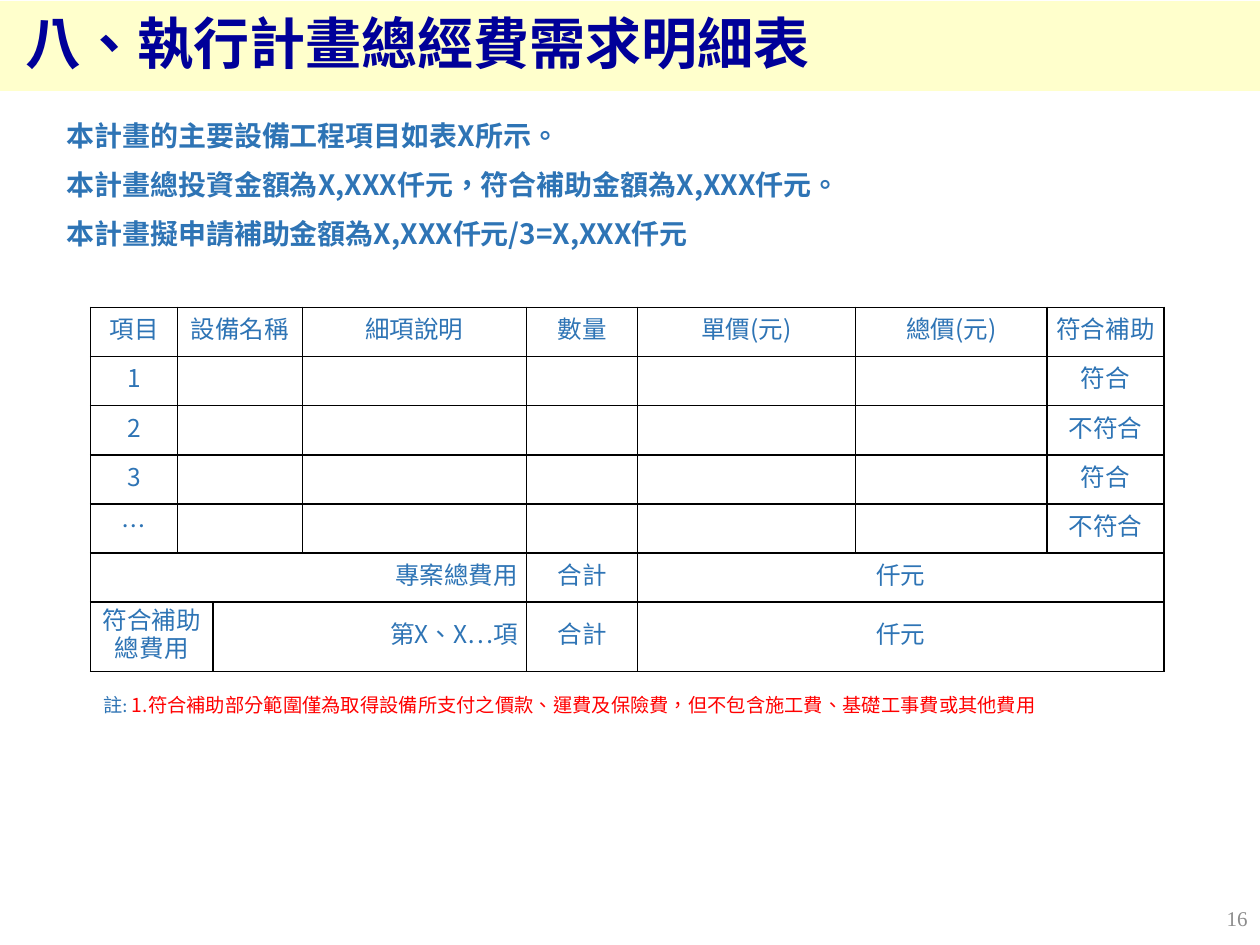
from lxml.etree import SubElement
from pptx import Presentation
from pptx.dml.color import RGBColor as Color
from pptx.enum.lang import MSO_LANGUAGE_ID as Language
from pptx.enum.text import MSO_ANCHOR as Anchor, MSO_AUTO_SIZE as AutoSize, PP_ALIGN as Align
from pptx.oxml import parse_xml
from pptx.oxml.ns import nsdecls, qn
from pptx.util import Inches, Pt

COLORS = {
    "band": "FFFFCC", "title": "000099", "text": "2E74B5",
    "alert": "FF0000", "number": "8C8C8C", "border": "000000",
}
CJK_FONT = "Noto Sans CJK SC"
COLUMNS = [0.69, 0.28, 0.71, 1.78, 0.88, 1.73, 1.52, 0.93]
ROWS = [0.39] * 6 + [0.55]
HEADERS = {0: "項目", 1: "設備名稱", 3: "細項說明", 4: "數量",
           5: "單價(元)", 6: "總價(元)", 7: "符合補助"}
ITEMS = [("1", "符合"), ("2", "不符合"), ("3", "符合"), ("…", "不符合")]
TOTALS = [
    {0: "專案總費用", 4: "合計", 5: "仟元"},
    {0: "符合補助總費用", 2: "第X、X…項", 4: "合計", 5: "仟元"},
]
SPANS = [(row, 1, 2) for row in range(5)] + [
    (5, 0, 3), (5, 5, 7), (6, 0, 1), (6, 2, 3), (6, 5, 7)]
RIGHT_ALIGNED = {(5, 0), (6, 2)}
STATEMENTS = [
    "本計畫的主要設備工程項目如表X所示。",
    "本計畫總投資金額為X,XXX仟元，符合補助金額為X,XXX仟元。",
    "本計畫擬申請補助金額為X,XXX仟元/3=X,XXX仟元",
]


def add_text(paragraph, text, size=14, color="text", font=CJK_FONT, bold=False,
             align=Align.LEFT, spacing=None, before=0):
    """Append a formatted run to a paragraph."""
    paragraph.alignment = align
    paragraph.space_before = Pt(before)
    if spacing:
        paragraph.line_spacing = spacing
    run = paragraph.add_run()
    run.text = text
    run.font.name = font
    run.font.size = Pt(size)
    run.font.bold = bold
    run.font.color.rgb = Color.from_string(COLORS[color])
    run.font.language_id = Language.TRADITIONAL_CHINESE
    SubElement(run.font._element, qn("a:ea"), typeface=CJK_FONT)


def place(shape, box, anchor=Anchor.TOP):
    """Position a text shape and return its text frame."""
    shape.left, shape.top, shape.width, shape.height = map(Inches, box)
    frame = shape.text_frame
    frame.word_wrap = True
    frame.auto_size = AutoSize.NONE
    frame.vertical_anchor = anchor
    return frame


def add_text_box(slide, box, anchor=Anchor.TOP):
    """Add a text box and return its first paragraph."""
    shape = slide.shapes.add_textbox(0, 0, 0, 0)
    return place(shape, box, anchor).paragraphs[0]


def build_title(slide, box):
    """Fill the title band."""
    title = slide.shapes.title
    frame = place(title, box, Anchor.MIDDLE)
    frame.margin_left = Inches(0.2)
    title.fill.solid()
    title.fill.fore_color.rgb = Color.from_string(COLORS["band"])
    title.line.color.rgb = Color.from_string(COLORS["band"])
    title.line.width = Pt(0.5)
    add_text(frame.paragraphs[0], "八、執行計畫總經費需求明細表", size=32,
             color="title", bold=True, spacing=0.9)


def build_statements(slide, box):
    """Fill the body placeholder with unbulleted statements."""
    frame = place(slide.placeholders[1], box)
    for index, text in enumerate(STATEMENTS):
        paragraph = frame.add_paragraph() if index else frame.paragraphs[0]
        add_text(paragraph, text, size=16, bold=True, spacing=Pt(22), before=6)
        properties = paragraph._p.get_or_add_pPr()
        properties.set("marL", "0")
        properties.set("indent", "0")
        SubElement(properties, qn("a:buNone"))


def format_cell(cell, row):
    """Give a cell its borders, insets and empty fill."""
    properties = cell._tc.get_or_add_tcPr()
    heavy = {4: "lnB", 5: "lnT"}.get(row)
    for side in ("lnL", "lnR", "lnT", "lnB"):
        width = Pt(1.5 if side == heavy else 1)
        properties.append(parse_xml(
            f'<a:{side} {nsdecls("a")} w="{width}"><a:solidFill>'
            f'<a:srgbClr val="{COLORS["border"]}"/></a:solidFill></a:{side}>'))
    cell.fill.background()
    cell.margin_left = cell.margin_right = Inches(0.07)
    cell.margin_top = cell.margin_bottom = 0
    cell.vertical_anchor = Anchor.MIDDLE


def build_cost_table(slide, box):
    """Add the cost table with merged item and total cells."""
    table = slide.shapes.add_table(len(ROWS), len(COLUMNS), *map(Inches, box)).table
    table.first_row = table.horz_banding = False
    for column, width in zip(table.columns, COLUMNS):
        column.width = Inches(width)
    for row, height in zip(table.rows, ROWS):
        row.height = Inches(height)
    for row, first, last in SPANS:
        table.cell(row, first).merge(table.cell(row, last))
    contents = [HEADERS] + [{0: item, 7: status} for item, status in ITEMS] + TOTALS
    for row, texts in enumerate(contents):
        for column in range(len(COLUMNS)):
            cell = table.cell(row, column)
            format_cell(cell, row)
            if column in texts:
                align = Align.RIGHT if (row, column) in RIGHT_ALIGNED else Align.CENTER
                add_text(cell.text_frame.paragraphs[0], texts[column],
                         align=align, spacing=Pt(16))


def build_note(slide, box):
    """Add the note under the table."""
    paragraph = add_text_box(slide, box)
    add_text(paragraph, "註: ", size=11, font="Calibri")
    add_text(paragraph, "1.", size=11, color="alert")
    add_text(paragraph, "符合補助部分範圍僅為取得設備所支付之價款、運費及保險費，"
             "但不包含施工費、基礎工事費或其他費用", size=11, color="alert", font="Calibri")


def build_page_number(slide, box):
    """Add the page number in the corner."""
    add_text(add_text_box(slide, box, Anchor.MIDDLE), "16", size=12, color="number",
             font="Times New Roman", align=Align.RIGHT)


def main():
    """Build and save the slide."""
    presentation = Presentation()
    presentation.slide_width, presentation.slide_height = Inches(10), Inches(7.5)
    slide = presentation.slides.add_slide(presentation.slide_layouts[1])
    build_title(slide, (0, 0.01, 10, 0.71))
    build_cost_table(slide, (0.72, 2.44, sum(COLUMNS), sum(ROWS)))
    build_note(slide, (0.72, 5.45, 8.51, 0.29))
    build_statements(slide, (0.43, 0.85, 9.33, 1.17))
    build_page_number(slide, (7.75, 7.09, 2.25, 0.4))
    presentation.save("out.pptx")


if __name__ == "__main__":
    main()
